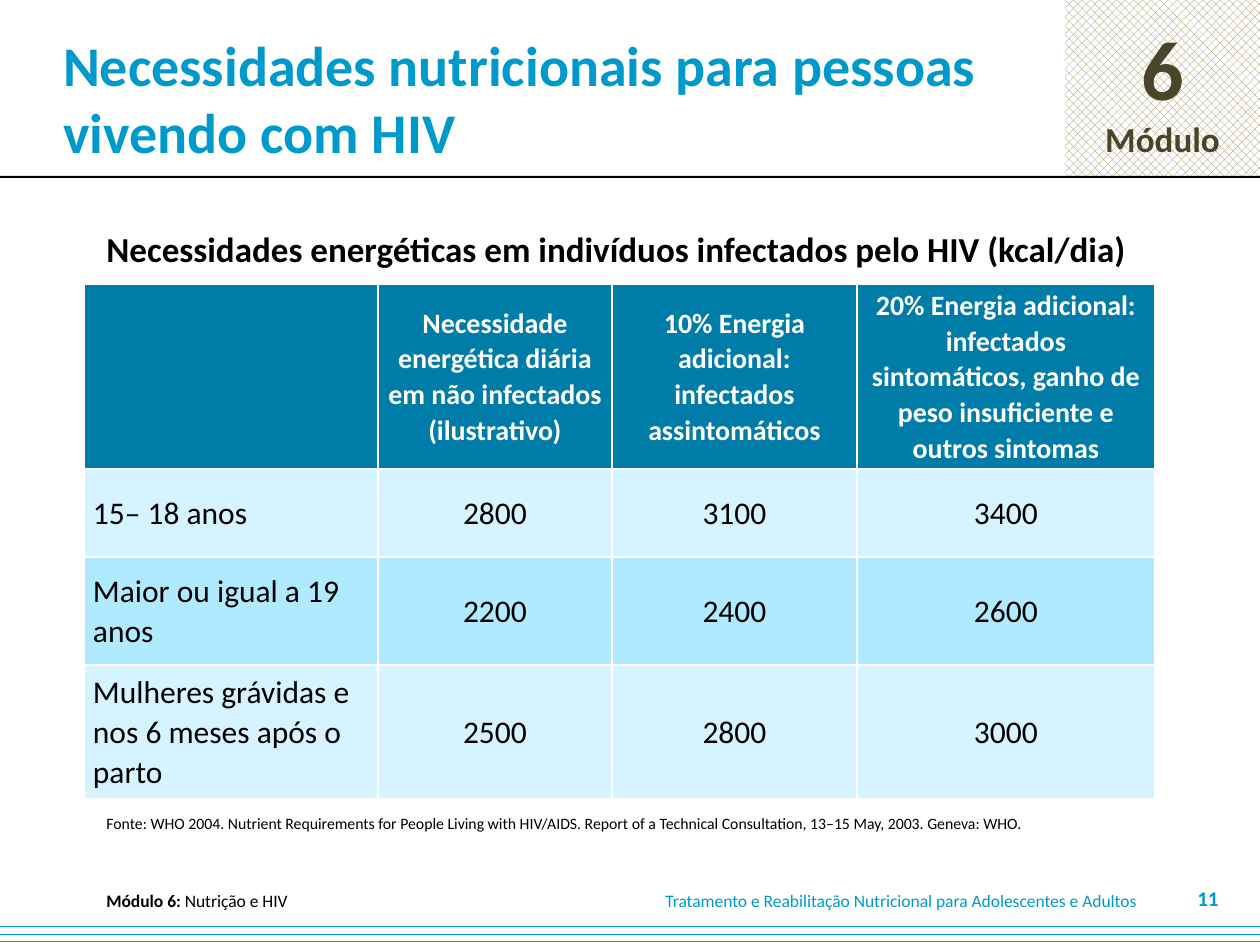
from lxml.etree import SubElement
from pptx import Presentation
from pptx.dml.color import RGBColor
from pptx.enum.dml import MSO_PATTERN
from pptx.enum.shapes import MSO_SHAPE
from pptx.enum.text import MSO_ANCHOR, PP_ALIGN
from pptx.oxml import parse_xml
from pptx.oxml.ns import nsdecls
from pptx.util import Emu, Pt

PX = 914400 / 126
BLUE, BLACK, WHITE, BROWN = "0099CC", "000000", "FFFFFF", "4A452A"
color = RGBColor.from_string


def place(left, top, width, height):
    return [Emu(round(value * PX)) for value in (left, top, width, height)]


def style(para, size, text_color, bold=False, align=PP_ALIGN.LEFT):
    para.alignment = align
    para.font.name = "Calibri"
    para.font.size = Pt(size)
    para.font.bold = bold
    para.font.color.rgb = color(text_color)


deck = Presentation()
deck.slide_width, deck.slide_height = place(0, 0, 1260, 945)[2:]
page = deck.slides.add_slide(deck.slide_layouts[5])
shapes = page.shapes

title = shapes.title
title.left, title.top, title.width, title.height = place(0, 0, 1081, 195)
title.text_frame.text = "Necessidades nutricionais para pessoas\vvivendo com HIV"
title.text_frame.vertical_anchor = MSO_ANCHOR.MIDDLE
title.text_frame.margin_left = Emu(round(63 * PX))
style(title.text_frame.paragraphs[0], 32, BLUE, True)

badge = shapes.add_shape(MSO_SHAPE.RECTANGLE, *place(1065, 0, 195, 176))
footer_band = shapes.add_shape(MSO_SHAPE.RECTANGLE, *place(0, 919, 1260, 26))
for shape, pattern, pattern_color in (
    (badge, MSO_PATTERN.PERCENT_50, "948A54"),
    (footer_band, MSO_PATTERN.DASHED_HORIZONTAL, BLUE),
):
    shape.shadow.inherit = False
    shape.line.fill.background()
    shape.fill.patterned()
    shape.fill.pattern = pattern
    shape.fill.fore_color.rgb = color(pattern_color)
    shape.fill.back_color.rgb = color(WHITE)

badge.text_frame.text = "6\nMódulo"
badge.text_frame.vertical_anchor = MSO_ANCHOR.MIDDLE
for para, size in zip(badge.text_frame.paragraphs, (48, 20)):
    style(para, size, BROWN, True, PP_ALIGN.CENTER)

rule = shapes.add_shape(MSO_SHAPE.RECTANGLE, *place(-2, 176, 1262, 2))
rule.shadow.inherit = False
rule.line.fill.background()
rule.fill.solid()
rule.fill.fore_color.rgb = color(BLACK)

middle, top = MSO_ANCHOR.MIDDLE, MSO_ANCHOR.TOP
left, right = PP_ALIGN.LEFT, PP_ALIGN.RIGHT
texts = [
    ((94, 218, 1103, 60), [("Necessidades energéticas em indivíduos infectados pelo HIV (kcal/dia)", True)],
     20, BLACK, left, middle),
    ((94, 808, 1071, 32), [("Fonte: WHO 2004. Nutrient Requirements for People Living with HIV/AIDS. "
                            "Report of a Technical Consultation, 13–15 May, 2003. Geneva: WHO.", False)],
     9, BLACK, left, top),
    ((94, 888, 554, 26), [("Módulo 6: ", True), ("Nutrição e HIV", False)],
     10, BLACK, left, middle),
    ((653, 888, 510, 26), [("Tratamento e Reabilitação Nutricional para Adolescentes e Adultos", False)],
     10, BLUE, left, middle),
    ((1168, 882, 63, 32), [("11", True)], 12, BLUE, right, middle),
]
for bounds, spans, size, text_color, align, anchor in texts:
    box = shapes.add_textbox(*place(*bounds))
    box.text_frame.word_wrap = True
    box.text_frame.vertical_anchor = anchor
    para = box.text_frame.paragraphs[0]
    style(para, size, text_color, align=align)
    for text, bold in spans:
        span = para.add_run()
        span.text = text
        span.font.bold = bold

rows = [
    ("", "Necessidade energética diária em não infectados (ilustrativo)",
     "10% Energia adicional: infectados assintomáticos",
     "20% Energia adicional: infectados sintomáticos, ganho de peso insuficiente e outros sintomas"),
    ("15– 18 anos", "2800", "3100", "3400"),
    ("Maior ou igual a 19 anos", "2200", "2400", "2600"),
    ("Mulheres grávidas e nos 6 meses após o parto", "2500", "2800", "3000"),
]
row_fills = ["007CA8", "D5F4FF", "AFEAFF", "D5F4FF"]
table = shapes.add_table(4, 4, *place(84, 284, 1071, 515)).table
for column, width in zip(table.columns, (294, 234, 245, 298)):
    column.width = Emu(round(width * PX))
for row, height in zip(table.rows, (185, 88, 108, 134)):
    row.height = Emu(round(height * PX))

for row_index, (labels, row_fill) in enumerate(zip(rows, row_fills)):
    header = row_index == 0
    for column_index, label in enumerate(labels):
        cell = table.cell(row_index, column_index)
        cell.text = label
        cell.vertical_anchor = middle
        cell.margin_left = cell.margin_right = Emu(round(9 * PX))
        cell.margin_top = cell.margin_bottom = 0
        cell.fill.solid()
        cell.fill.fore_color.rgb = color(row_fill)
        para = cell.text_frame.paragraphs[0]
        para.line_spacing = 1.05
        style(para, 16 if header else 18, WHITE if header else BLACK, header,
              PP_ALIGN.CENTER if column_index else left)
        properties = cell._tc.get_or_add_tcPr()
        for position, side in enumerate("LRTB"):
            border = parse_xml(f'<a:ln{side} {nsdecls("a")} w="12700"><a:solidFill/></a:ln{side}>')
            SubElement(border[0], "{http://schemas.openxmlformats.org/drawingml/2006/main}srgbClr", val=WHITE)
            properties.insert(position, border)

deck.save("out.pptx")
